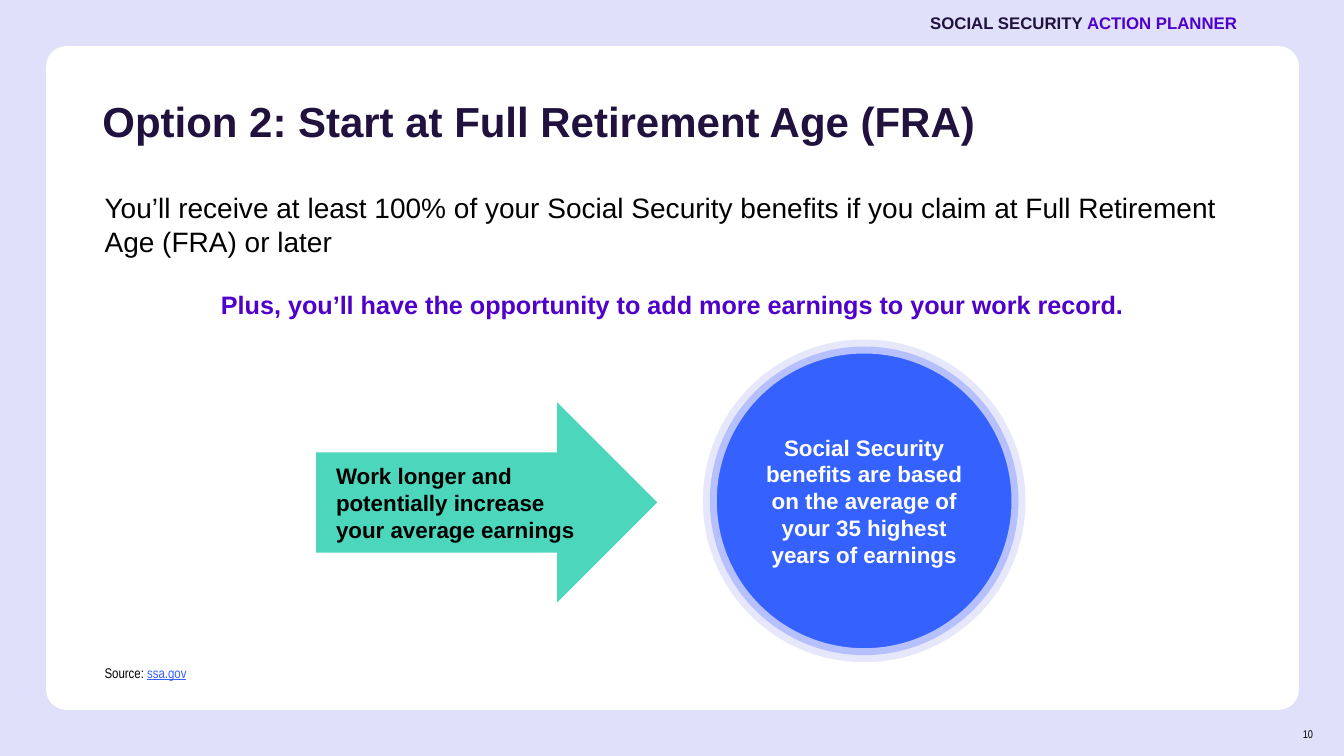
from lxml.etree import SubElement
from pptx import Presentation
from pptx.dml.color import RGBColor
from pptx.enum.shapes import MSO_SHAPE as Shape
from pptx.enum.text import MSO_ANCHOR as Anchor, MSO_AUTO_SIZE as AutoSize, PP_ALIGN as Align
from pptx.oxml.ns import qn
from pptx.util import Emu, Pt

PX = 9525
LAVENDER, NAVY, PURPLE = "E0E0FB", "20113E", "4F00CA"
TEAL, BLUE, LINK = "4CD6BB", "3562FF", "3461FF"
WHITE, BLACK = "FFFFFF", "000000"


def px(value):
    return Emu(value * PX)


def colour(value):
    return RGBColor.from_string(value)


class Deck:
    font = "Arial"
    small_font = "Arial Narrow"

    def __init__(self, width, height):
        self.file = Presentation()
        self.file.slide_width, self.file.slide_height = px(width), px(height)

    def new_slide(self, layout, background):
        self.slide = self.file.slides.add_slide(self.file.slide_layouts[layout])
        fill = self.slide.background.fill
        fill.solid()
        fill.fore_color.rgb = colour(background)

    def set_text(self, target, runs, size, bold=False, align=Align.LEFT,
                 anchor=Anchor.MIDDLE, font=None, spacing=None):
        frame = target.text_frame
        frame.word_wrap = True
        frame.auto_size = AutoSize.NONE
        frame.vertical_anchor = anchor
        paragraph = frame.paragraphs[0]
        paragraph.alignment = align
        paragraph.space_before = Pt(0)
        paragraph.line_spacing = spacing
        for words, shade, underline in runs:
            run = paragraph.add_run()
            run.text = words
            run.font.name = font or self.font
            run.font.size = Pt(size)
            run.font.bold = bold
            run.font.underline = underline
            run.font.color.rgb = colour(shade)
        return paragraph

    def placeholder(self, idx, box, runs, size, **style):
        holder = self.slide.placeholders[idx]
        holder.left, holder.top, holder.width, holder.height = map(px, box)
        paragraph = self.set_text(holder, runs, size, **style)
        if idx:
            properties = paragraph._p.get_or_add_pPr()
            properties.set("marL", "0")
            properties.set("indent", "0")
            SubElement(properties, qn("a:buNone"))

    def text(self, box, runs, size, **style):
        self.set_text(self.slide.shapes.add_textbox(*map(px, box)), runs, size, **style)

    def shape(self, kind, box, fill):
        item = self.slide.shapes.add_shape(kind, *map(px, box))
        item.shadow.inherit = False
        item.fill.solid()
        item.fill.fore_color.rgb = colour(fill)
        item.line.fill.background()
        return item

    def halo(self, item, shade, width, opacity):
        item.line.color.rgb = colour(shade)
        item.line.width = Pt(width)
        tint = item.line._ln.find(".//" + qn("a:srgbClr"))
        SubElement(tint, qn("a:alpha"), val=str(opacity * 1000))


def main():
    deck = Deck(1280, 720)
    deck.new_slide(4, LAVENDER)

    card = deck.shape(Shape.ROUNDED_RECTANGLE, (44, 44, 1193, 632), WHITE)
    card.adjustments[0] = 0.03
    tree = card._element.getparent()
    tree.remove(card._element)
    tree.insert(2, card._element)

    deck.placeholder(0, (88, 74, 1140, 88),
                     [("Option 2: Start at Full Retirement Age (FRA)", NAVY, False)],
                     30, bold=True, spacing=0.9)
    deck.placeholder(1, (640, 0, 548, 43),
                     [("SOCIAL SECURITY", NAVY, False), (" ACTION PLANNER", PURPLE, False)],
                     12, bold=True, align=Align.RIGHT)
    deck.placeholder(2, (90, 177, 1091, 88),
                     [("You’ll receive at least 100% of your Social Security benefits "
                       "if you claim at Full Retirement Age (FRA) or later", BLACK, False)],
                     20, anchor=Anchor.TOP)
    deck.placeholder(3, (97, 259, 1087, 61),
                     [("Plus, you’ll have the opportunity to add more earnings "
                       "to your work record.", PURPLE, False)],
                     18, bold=True, align=Align.CENTER)

    work_longer = deck.shape(Shape.RIGHT_ARROW, (301, 383, 325, 191), TEAL)
    work_longer.text_frame.margin_left = px(19)
    deck.set_text(work_longer,
                  [("Work longer and potentially increase your average earnings", BLACK, False)],
                  16, bold=True)

    benefits = deck.shape(Shape.OVAL, (676, 330, 294, 294), BLUE)
    deck.halo(benefits, LAVENDER, 10, 75)
    deck.set_text(benefits,
                  [("Social Security benefits are based on the average of "
                    "your 35 highest years of earnings", WHITE, False)],
                  16, bold=True, align=Align.CENTER)

    deck.placeholder(4, (90, 593, 1080, 61),
                     [("Source: ", BLACK, False), ("ssa.gov", LINK, True)],
                     10, anchor=Anchor.BOTTOM, font=deck.small_font)
    deck.text((1193, 680, 67, 38), [("10", BLACK, False)], 8,
              align=Align.RIGHT, font=deck.small_font)

    deck.file.save("out.pptx")


if __name__ == "__main__":
    main()
